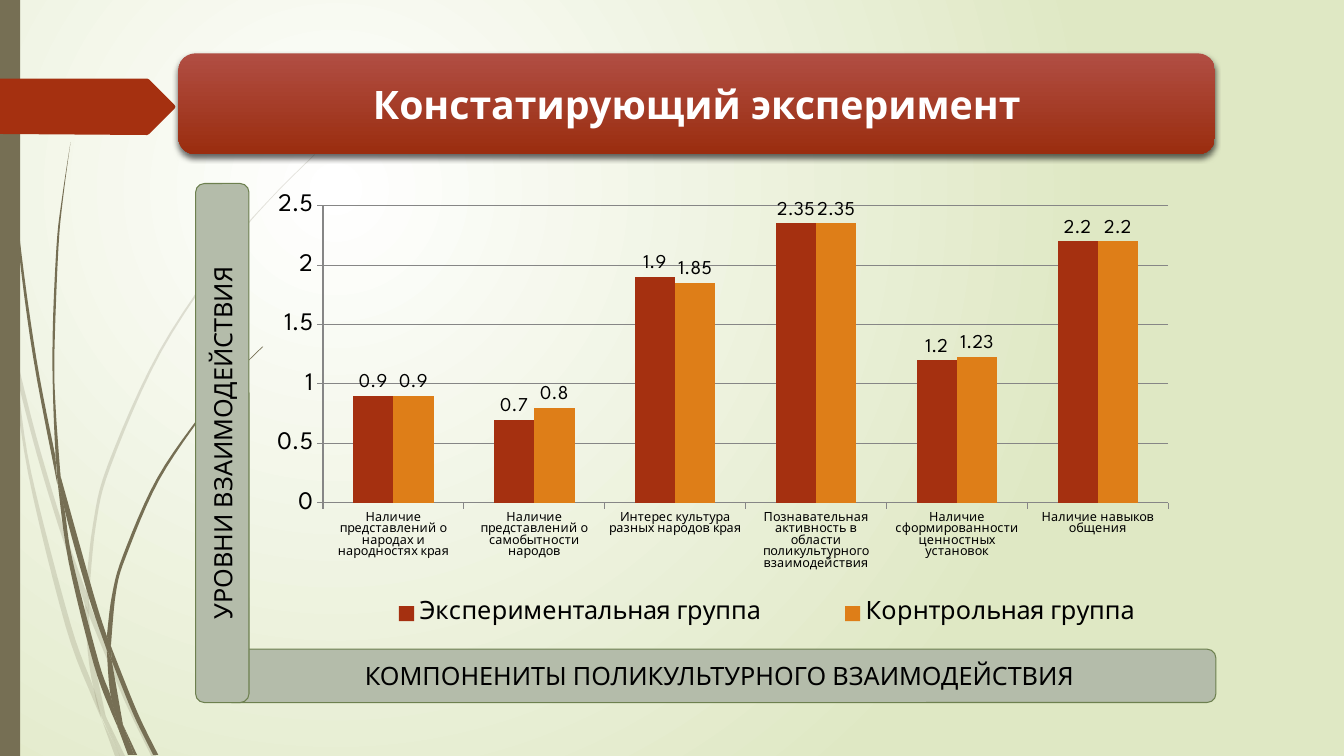
import lxml.etree
import pptx
import pptx.chart.data
import pptx.dml.color
import pptx.enum.chart
import pptx.enum.shapes
import pptx.enum.text
import pptx.oxml.ns
import pptx.util

RGB = pptx.dml.color.RGBColor
WHITE = RGB(0xFF, 0xFF, 0xFF)
BLACK = RGB(0, 0, 0)
PALE_GREEN = RGB(0xDF, 0xE8, 0xC4)
OLIVE = RGB(0x76, 0x6F, 0x54)
RUST = RGB(0xA5, 0x30, 0x10)
ORANGE = RGB(0xDE, 0x7E, 0x18)
TITLE_TOP = RGB(0xB1, 0x4E, 0x43)
TITLE_BOTTOM = RGB(0x9A, 0x2D, 0x0F)
SAGE = RGB(0xB4, 0xBC, 0xAA)
MOSS = RGB(0x6D, 0x80, 0x4F)
GREY = RGB(0x86, 0x86, 0x86)
FONT = "League Spartan"
COLUMNS, ROWS = 1333, 750

FAINT_WISPS = [
    ([(11, 350), (9, 322), (0, 282)], [(0, 299), (10, 344)]),
    ([(17, 376), (36, 449), (58, 522), (84, 599)], [(85, 586), (62, 520), (36, 433), (14, 345)]),
    ([(88, 596), (92, 607), (127, 692), (155, 750)], [(150, 750), (123, 694), (88, 610)]),
    ([(105, 711), (124, 750)], [(119, 750)]),
    ([(11, 350), (17, 376), (31, 469), (70, 619), (93, 683), (101, 714)],
     [(92, 693), (65, 621), (28, 470), (11, 350)]),
    ([(84, 599), (87, 646), (93, 683), (105, 711)], [(91, 646), (88, 610), (84, 599)]),
    ([(88, 596), (95, 522), (110, 462), (160, 349), (229, 245), (268, 198), (312, 154)],
     [(312, 153), (268, 197), (228, 244), (158, 348), (107, 461), (92, 522), (85, 586)]),
    ([(101, 714), (114, 750)], [(119, 750)]),
    ([(88, 610), (88, 596), (85, 586)], [(84, 599)]),
    ([(93, 683), (99, 707), (119, 750)], [(105, 711), (96, 692)]),
]
DARK_WISPS = [
    ([(3, 0), (4, 48), (7, 110), (17, 233), (33, 355), (57, 481)],
     [(55, 453), (36, 355), (19, 232), (8, 109), (5, 48), (4, 0)]),
    ([(60, 472), (64, 505), (88, 592), (106, 645)], [(106, 631), (93, 590), (60, 472)]),
    ([(110, 641), (136, 706), (157, 749)], [(152, 749), (132, 708), (111, 656)]),
    ([(57, 477), (64, 505), (72, 556), (98, 657), (110, 691), (117, 722)],
     [(111, 708), (93, 659), (68, 557), (57, 477)]),
    ([(60, 472), (55, 401), (54, 349), (58, 245), (63, 193), (70, 141)],
     [(70, 141), (62, 193), (56, 245), (52, 349), (55, 449), (60, 472)]),
    ([(122, 719), (136, 749)], [(133, 749)]),
    ([(55, 449), (60, 472), (64, 505)], [(57, 477)]),
    ([(110, 641), (115, 588), (125, 552), (158, 476), (205, 406), (231, 374), (261, 344)],
     [(260, 344), (231, 373), (204, 405), (156, 474), (122, 551), (111, 591), (106, 631)]),
    ([(117, 722), (127, 749)], [(131, 749)]),
    ([(106, 645), (110, 691), (122, 719)], [(111, 656), (106, 645)]),
    ([(106, 631), (110, 641), (111, 656)], [(106, 645)]),
    ([(110, 691), (116, 706), (122, 719), (133, 749)], [(130, 749), (117, 722)]),
]
ARROW = [(0, 78), (146, 78), (148, 79), (173, 104), (174, 106),
         (173, 108), (148, 133), (146, 134), (0, 133)]
COMPONENTS = [
    "Наличие представлений о народах и народностях края",
    "Наличие представлений о самобытности народов",
    "Интерес культура разных народов края",
    "Познавательная активность в области поликультурного взаимодействия",
    "Наличие сформированности ценностных установок",
    "Наличие навыков общения",
]
GROUPS = [
    ("Экспериментальная группа", [0.9, 0.7, 1.9, 2.35, 1.2, 2.2], RUST),
    ("Корнтрольная группа", [0.9, 0.8, 1.85, 2.35, 1.23, 2.2], ORANGE),
]


def apply(target, formats):
    for name, value in formats.items():
        setattr(target, name, value)


def add_xml(parent, tag, **attributes):
    values = {name: str(value) for name, value in attributes.items()}
    return lxml.etree.SubElement(parent, pptx.oxml.ns.qn(tag), values)


def find(element, tag):
    return element.find(".//" + pptx.oxml.ns.qn(tag))


def smooth_edge(nodes, steps=6):
    padded = [nodes[0], *nodes, nodes[-1]]
    points = [nodes[0]]
    for a, b, c, d in zip(padded, padded[1:], padded[2:], padded[3:]):
        for step in range(1, steps + 1):
            t = step / steps
            points.append(tuple(
                q + t * (r - p) / 2 + t * t * (2 * p - 5 * q + 4 * r - s) / 2
                + t ** 3 * (3 * q - p - 3 * r + s) / 2
                for p, q, r, s in zip(a, b, c, d)))
    return points


class SlideBuilder:
    def __init__(self, presentation):
        self.slide = presentation.slides.add_slide(presentation.slide_layouts[6])
        self.column = presentation.slide_width / COLUMNS
        self.row = presentation.slide_height / ROWS

    def frame(self, left, top, width, height):
        return (round(left * self.column), round(top * self.row),
                round(width * self.column), round(height * self.row))

    def gradient(self, fill, colors):
        fill.gradient()
        for stop, position, color in zip(fill.gradient_stops, (0, 1), colors):
            stop.position = position
            stop.color.rgb = color

    def background(self, *colors):
        self.gradient(self.slide.background.fill, colors)
        gradient = find(self.slide.element, "a:gradFill")
        gradient.remove(find(gradient, "a:lin"))
        circle = add_xml(gradient, "a:path", path="circle")
        add_xml(circle, "a:fillToRect", l=50000, t=50000, r=100000, b=100000)

    def paint(self, shape, color, opacity=100):
        shape.shadow.inherit = False
        shape.fill.solid()
        shape.fill.fore_color.rgb = color
        if opacity < 100:
            add_xml(find(shape.element, "a:srgbClr"), "a:alpha", val=opacity * 1000)
        shape.line.fill.background()

    def outline(self, points, color, opacity=100):
        scaled = [(x * self.column, y * self.row) for x, y in points]
        builder = self.slide.shapes.build_freeform(*scaled[0])
        builder.add_line_segments(scaled[1:], close=True)
        self.paint(builder.convert_to_shape(), color, opacity)

    def block(self, kind, place, color):
        block = self.slide.shapes.add_shape(kind, *self.frame(*place))
        self.paint(block, color)
        return block

    def style_font(self, font, size, color=BLACK, bold=False):
        apply(font, {"name": FONT, "size": pptx.util.Pt(size), "bold": bold})
        font.color.rgb = color

    def banner(self, text, place, size=18, color=BLACK, bold=False, rotation=0):
        banner = self.block(pptx.enum.shapes.MSO_SHAPE.ROUNDED_RECTANGLE, place, SAGE)
        banner.rotation = rotation
        apply(banner.text_frame, {"text": text, "word_wrap": True,
                                  "vertical_anchor": pptx.enum.text.MSO_ANCHOR.MIDDLE})
        paragraph = banner.text_frame.paragraphs[0]
        paragraph.alignment = pptx.enum.text.PP_ALIGN.CENTER
        self.style_font(paragraph.runs[0].font, size, color, bold)
        return banner

    def title(self, text, place):
        title = self.banner(text, place, 28, WHITE, True)
        self.gradient(title.fill, (TITLE_TOP, TITLE_BOTTOM))
        title.fill.gradient_angle = 270
        shadow = add_xml(find(title.element, "a:effectLst"), "a:outerShdw", blurRad=50800,
                         dist=38100, dir=5400000, rotWithShape=0)
        add_xml(add_xml(shadow, "a:srgbClr", val="000000"), "a:alpha", val=60000)

    def axis_label(self, text, place, rotation=0):
        label = self.banner(text, place, rotation=rotation)
        label.line.color.rgb = MOSS
        label.line.width = pptx.util.Pt(0.75)

    def chart_layout(self, parent, index, x, y, w, h, inner=False):
        for old in parent.findall(pptx.oxml.ns.qn("c:layout")):
            parent.remove(old)
        layout = add_xml(parent, "c:layout")
        manual = add_xml(layout, "c:manualLayout")
        if inner:
            add_xml(manual, "c:layoutTarget", val="inner")
        for side in ("x", "y"):
            add_xml(manual, f"c:{side}Mode", val="edge")
        for side, share in {"x": x, "y": y, "w": w, "h": h}.items():
            add_xml(manual, f"c:{side}", val=share)
        parent.insert(index, layout)

    def column_chart(self, place, categories, groups):
        data = pptx.chart.data.CategoryChartData()
        data.categories = categories
        for name, values, _ in groups:
            data.add_series(name, values)
        chart = self.slide.shapes.add_chart(
            pptx.enum.chart.XL_CHART_TYPE.COLUMN_CLUSTERED, *self.frame(*place), data).chart
        apply(chart, {"has_title": False, "has_legend": True})
        self.style_font(chart.font, 18)
        apply(chart.plots[0], {"gap_width": 150, "overlap": 0, "vary_by_categories": False})
        apply(chart.value_axis, {"minimum_scale": 0, "maximum_scale": 2.5, "major_unit": 0.5,
                                 "has_major_gridlines": True})
        self.style_font(chart.category_axis.tick_labels.font, 9)
        for axis in (chart.category_axis, chart.value_axis):
            axis.major_tick_mark = pptx.enum.chart.XL_TICK_MARK.OUTSIDE
            axis.format.line.color.rgb = GREY
        chart.value_axis.major_gridlines.format.line.color.rgb = GREY
        for series, (_, _, color) in zip(chart.plots[0].series, groups):
            series.format.fill.solid()
            series.format.fill.fore_color.rgb = color
            apply(series.data_labels, {"show_value": True,
                                       "position": pptx.enum.chart.XL_LABEL_POSITION.OUTSIDE_END})
            self.style_font(series.data_labels.font, 14)
        apply(chart.legend, {"position": pptx.enum.chart.XL_LEGEND_POSITION.RIGHT,
                             "include_in_layout": False})
        self.chart_layout(find(chart.element, "c:plotArea"), 0, 0.07, 0.06, 0.8, 0.63, True)
        self.chart_layout(find(chart.element, "c:legend"), 1, 0.07, 0.87, 0.84, 0.11)


def main():
    presentation = pptx.Presentation()
    apply(presentation, {"slide_width": pptx.util.Inches(13.33),
                         "slide_height": pptx.util.Inches(7.5)})
    page = SlideBuilder(presentation)
    page.background(WHITE, PALE_GREEN)
    for wisps, opacity in ((FAINT_WISPS, 20), (DARK_WISPS, 100)):
        for outward, back in wisps:
            page.outline(smooth_edge(outward) + smooth_edge(back), OLIVE, opacity)
    page.block(pptx.enum.shapes.MSO_SHAPE.RECTANGLE, (0, 0, 20, ROWS), OLIVE)
    page.outline(ARROW, RUST)
    page.column_chart((247, 176, 1048, 468), COMPONENTS, GROUPS)
    page.title("Констатирующий эксперимент", (177, 53, 1028, 100))
    page.axis_label("КОМПОНЕНИТЫ ПОЛИКУЛЬТУРНОГО ВЗАИМОДЕЙСТВИЯ", (221, 644, 985, 53))
    page.axis_label("УРОВНИ ВЗАИМОДЕЙСТВИЯ", (-37, 413, 515, 53), 270)
    presentation.save("out.pptx")


if __name__ == "__main__":
    main()
